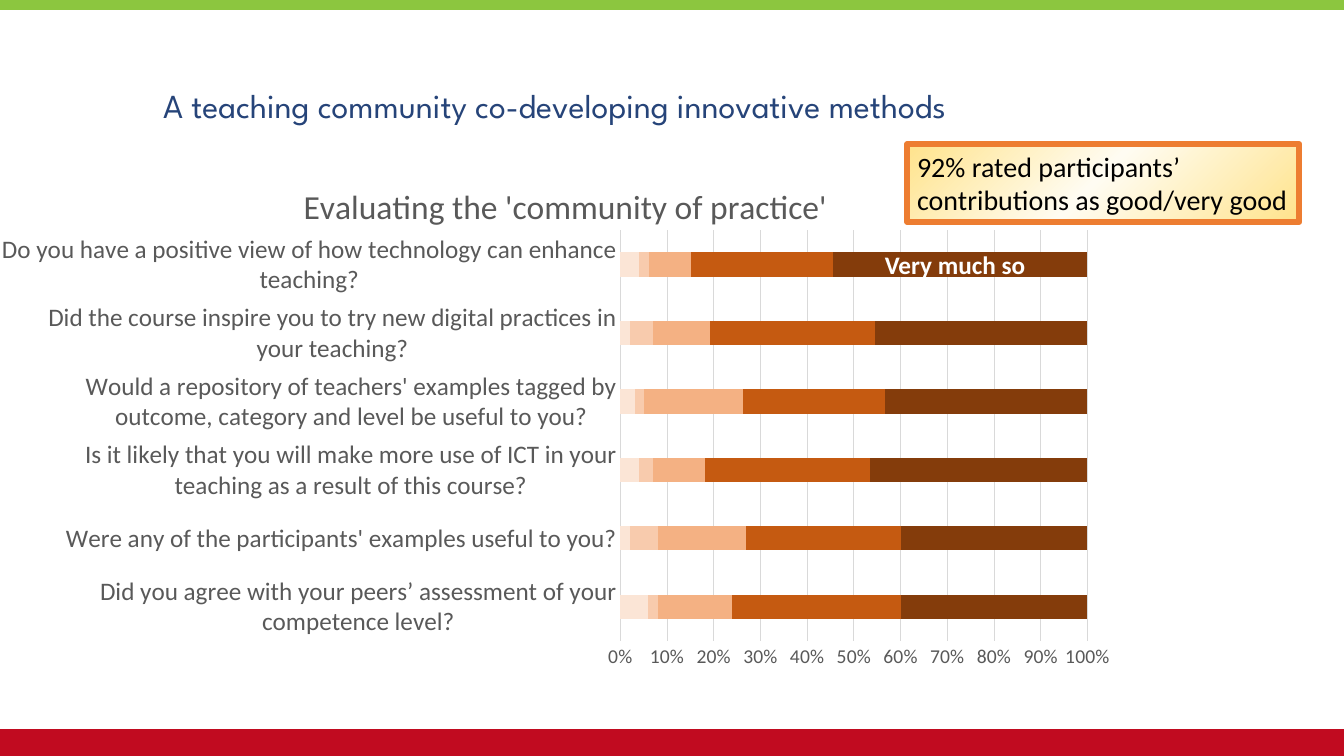
import pptx
import pptx.chart.data
import pptx.dml.color
import pptx.enum.chart
import pptx.enum.shapes
import pptx.enum.text
import pptx.oxml
import pptx.oxml.ns
import pptx.util

Pt = pptx.util.Pt
ANCHOR = pptx.enum.text.MSO_ANCHOR
RECT = pptx.enum.shapes.MSO_SHAPE.RECTANGLE
W, H = 960, 540

QUESTIONS = [
    "Did you agree with your peers’ assessment of your competence level?",
    "Were any of the participants' examples useful to you?",
    "Is it likely that you will make more use of ICT in your teaching as a result of this course?",
    "Would a repository of teachers' examples tagged by outcome, category and level be useful to you?",
    "Did the course inspire you to try new digital practices in your teaching?",
    "Do you have a positive view of how technology can enhance teaching?",
]
RATINGS = [
    ("Series 1", "FBE5D6", (6, 2, 4, 3, 2, 4)),
    ("Series 2", "F8CBAD", (2, 6, 3, 2, 5, 2)),
    ("Series 3", "F4B183", (16, 19, 11, 21, 12, 9)),
    ("Series 4", "C55A11", (36, 33, 35, 30, 35, 30)),
    ("Series 5", "843C0B", (40, 40, 46, 43, 45, 54)),
]


def rgb(value):
    """Return the colour for a hex string."""
    return pptx.dml.color.RGBColor.from_string(value)


def xml(tag, body):
    """Return a drawing or chart element built from its tag and inner XML."""
    ns = pptx.oxml.ns.nsdecls("a", "c")
    return pptx.oxml.parse_xml(f"<{tag} {ns}>{body}</{tag}>")


def set_font(font, size, color, name="Calibri", bold=False):
    """Set size, colour, typeface and weight of a font."""
    font.size, font.name, font.bold = Pt(size), name, bold
    font.color.rgb = rgb(color)


def write(s, text, size, color, name="Calibri", bold=False, wrap=True, anchor=ANCHOR.TOP):
    """Write one left-aligned paragraph in a shape and return it."""
    tf = s.text_frame
    tf.word_wrap, tf.vertical_anchor = wrap, anchor
    p = tf.paragraphs[0]
    p.alignment = pptx.enum.text.PP_ALIGN.LEFT
    r = p.add_run()
    r.text = text
    set_font(r.font, size, color, name, bold)
    return p


def add_box(sp, x, y, w, h):
    """Add a rectangle without a shadow or line."""
    s = sp.add_shape(RECT, Pt(x), Pt(y), Pt(w), Pt(h))
    s.shadow.inherit = False
    s.line.fill.background()
    return s


def add_text(sp, x, y, w, h, *args, **kwargs):
    """Add a text box and return its paragraph."""
    return write(sp.add_textbox(Pt(x), Pt(y), Pt(w), Pt(h)), *args, **kwargs)


def add_line(sp, x1, y1, x2, y2, color, width):
    """Add a straight line without a shadow."""
    kind = pptx.enum.shapes.MSO_CONNECTOR.STRAIGHT
    s = sp.add_connector(kind, Pt(x1), Pt(y1), Pt(x2), Pt(y2))
    s.line.color.rgb, s.line.width = rgb(color), Pt(width)
    s._element.spPr.append(xml("a:effectLst", ""))


def add_callout(sp, x, y, w, h, text):
    """Add a framed box with a radial gradient."""
    s = add_box(sp, x, y, w, h)
    stops = "".join(
        f'<a:gs pos="{pos * 1000}"><a:srgbClr val="{color}"/></a:gs>'
        for pos, color in ((0, "FFE38C"), (52, "FFFCF2"), (100, "FFE38C")))
    grad = xml("a:gradFill", f'<a:gsLst>{stops}</a:gsLst><a:path path="circle">'
                             '<a:fillToRect l="100000" t="100000"/></a:path>')
    s._element.spPr.find(pptx.oxml.ns.qn("a:prstGeom")).addnext(grad)
    s.line.color.rgb, s.line.width = rgb("ED7D31"), Pt(4.5)
    write(s, text, 20, "000000")


def style_axis(axis, size):
    """Remove the tick marks of an axis and set its label font."""
    none = pptx.enum.chart.XL_TICK_MARK.NONE
    axis.major_tick_mark = axis.minor_tick_mark = none
    set_font(axis.tick_labels.font, size, "595959")


def set_plot_area(chart, **frame):
    """Fix the inner plot area as fractions of the chart."""
    modes = '<c:xMode val="edge"/><c:yMode val="edge"/>'
    sizes = "".join(f'<c:{key} val="{val}"/>' for key, val in frame.items())
    area = chart._chartSpace.chart.plotArea
    for old in area.findall(pptx.oxml.ns.qn("c:layout")):
        area.remove(old)
    area.insert(0, xml("c:layout", '<c:manualLayout><c:layoutTarget val="inner"/>'
                                   f"{modes}{sizes}</c:manualLayout>"))


def add_ratings_chart(sp, x, y, w, h, title):
    """Add the stacked bar chart of the survey answers."""
    data = pptx.chart.data.CategoryChartData()
    data.categories = QUESTIONS
    for name, _, values in RATINGS:
        data.add_series(name, values)
    kind = pptx.enum.chart.XL_CHART_TYPE.BAR_STACKED_100
    chart = sp.add_chart(kind, Pt(x), Pt(y), Pt(w), Pt(h), data).chart
    set_font(chart.font, 10, "000000")
    chart.has_legend = False
    r = chart.chart_title.text_frame.paragraphs[0].add_run()
    r.text = title
    set_font(r.font, 24, "595959")
    plot = chart.plots[0]
    plot.gap_width, plot.overlap, plot.vary_by_categories = 182, 100, False
    for series, (_, color, _) in zip(plot.series, RATINGS):
        series.format.fill.solid()
        series.format.fill.fore_color.rgb = rgb(color)
    cat, val = chart.category_axis, chart.value_axis
    style_axis(cat, 18)
    style_axis(val, 14)
    val.has_major_gridlines = True
    for line in (cat.format.line, val.major_gridlines.format.line):
        line.color.rgb, line.width = rgb("D9D9D9"), Pt(0.75)
    val.format.line.fill.background()
    val.tick_labels.number_format = "0%"
    val.tick_labels.number_format_is_linked = False
    set_plot_area(chart, x=0.549, y=0.126, w=0.416, h=0.749)


def main():
    """Build the slide and save it."""
    prs = pptx.Presentation()
    prs.slide_width, prs.slide_height = Pt(W), Pt(H)
    sp = prs.slides.add_slide(prs.slide_layouts[6]).shapes
    add_line(sp, 0, 530.6, W, 530.6, "C10B20", 19.25)
    p = add_text(sp, 109.4, 37.4, 711.4, 78.5,
                 "A teaching community co-developing innovative methods",
                 24, "264479", name="League Spartan", anchor=ANCHOR.MIDDLE)
    p.line_spacing = 0.9
    s = add_box(sp, 0, 0, W, 7)
    s.fill.solid()
    s.fill.fore_color.rgb = rgb("8CC63F")
    add_callout(sp, 648, 103, 280, 55.5,
                "92% rated participants’ contributions as good/very good")
    add_ratings_chart(sp, 1.4, 115.2, 803.5, 391.7,
                      "Evaluating the 'community of practice'")
    add_text(sp, 625, 174.2, 115.2, 29, "Very much so", 18, "FFFFFF", bold=True, wrap=False)
    prs.save("out.pptx")


if __name__ == "__main__":
    main()
